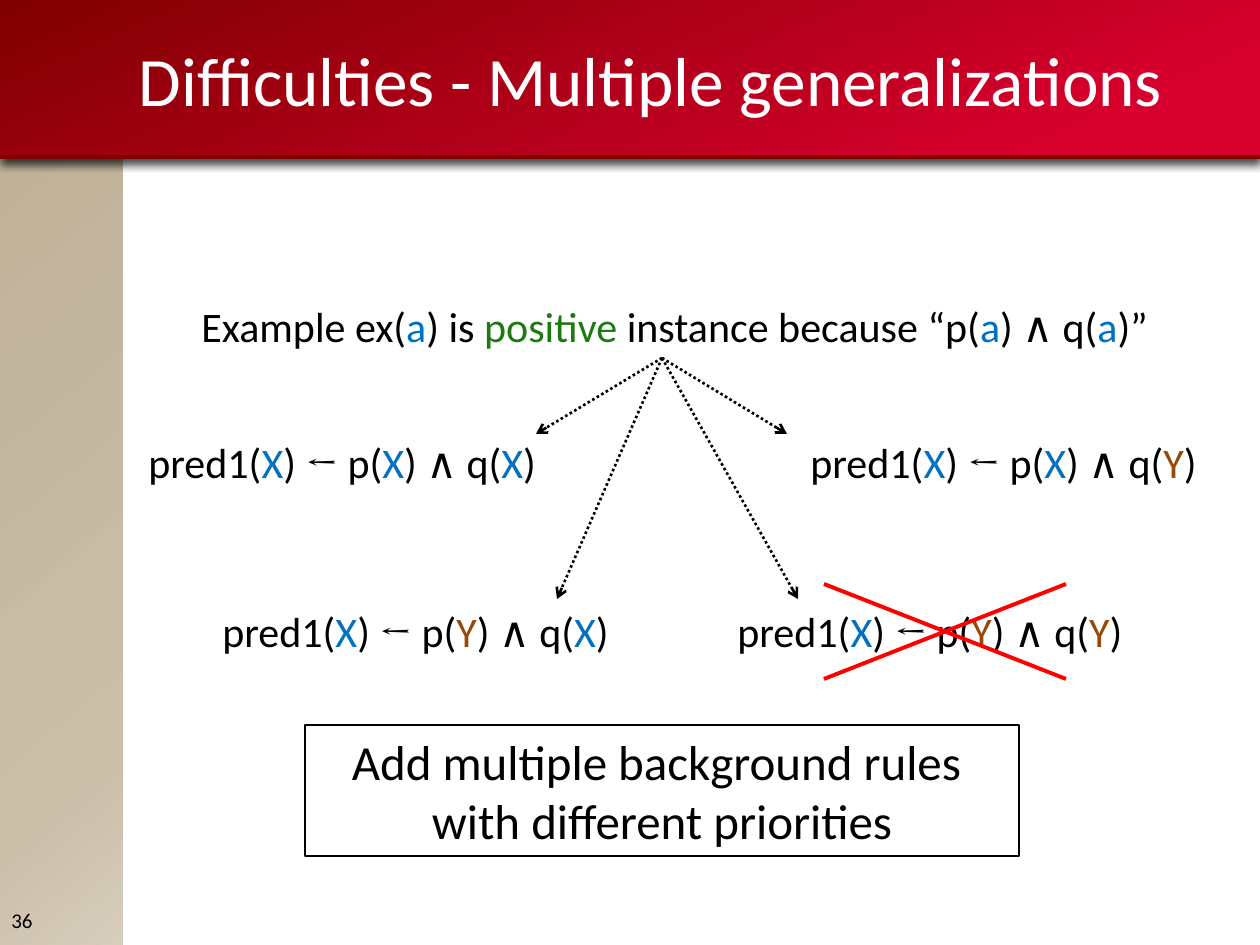
from dataclasses import dataclass

from lxml import etree
from pptx import Presentation
from pptx.dml.color import RGBColor
from pptx.enum.dml import MSO_LINE
from pptx.enum.shapes import MSO_CONNECTOR, MSO_SHAPE
from pptx.enum.text import MSO_ANCHOR, MSO_AUTO_SIZE, PP_ALIGN
from pptx.oxml import parse_xml
from pptx.oxml.ns import nsdecls, qn
from pptx.util import Emu, Pt

RECTANGLE = MSO_SHAPE.RECTANGLE
STRAIGHT = MSO_CONNECTOR.STRAIGHT
DOTTED = MSO_LINE.ROUND_DOT
LEFT, CENTER = PP_ALIGN.LEFT, PP_ALIGN.CENTER
TOP, MIDDLE = MSO_ANCHOR.TOP, MSO_ANCHOR.MIDDLE
GROW = MSO_AUTO_SIZE.SHAPE_TO_FIT_TEXT
EMU_PER_PX = 914400 / 126
TITLE_ONLY = 5


@dataclass(frozen=True)
class Theme:
    font: str = "Calibri"
    arrow_font: str = "Cambria"
    text: str = "000000"
    title: str = "FFFFFF"
    shared: str = "0070C0"
    fresh: str = "984807"
    positive: str = "1C7B0F"
    cross: str = "FF0000"
    band_edge: str = "800000"
    band: tuple = ((0, "800000"), (87, "D8002E"))
    sidebar: tuple = ((0, "BFB198"), (79, "CBBFAA"), (100, "D7CDBC"))
    title_size: float = 39.6
    advice_size: int = 28
    body_size: int = 24
    number_size: int = 12


THEME = Theme()
VARIABLE_COLORS = {"X": THEME.shared, "Y": THEME.fresh}


def px(*lengths):
    return [Emu(round(length * EMU_PER_PX)) for length in lengths]


def add_runs(paragraph, runs, size):
    """Add (text, color[, font]) runs."""
    for text, color, *font in runs:
        run = paragraph.add_run()
        run.text = text
        run.font.size = Pt(size)
        run.font.name = font[0] if font else THEME.font
        run.font.color.rgb = RGBColor.from_string(color)


def add_text(slide, box, runs, size, anchor=TOP, indent=0):
    label = slide.shapes.add_textbox(*px(*box))
    frame = label.text_frame
    frame.word_wrap = True
    frame.vertical_anchor = anchor
    if anchor == TOP:
        frame.auto_size = GROW
    paragraph = frame.paragraphs[0]
    if indent:
        paragraph.level = 1
        properties = paragraph._p.get_or_add_pPr()
        properties.set("marL", str(px(indent)[0]))
        properties.set("indent", "0")
    add_runs(paragraph, runs, size)


def add_gradient_panel(slide, box, stops, angle):
    panel = slide.shapes.add_shape(RECTANGLE, *px(*box))
    panel.shadow.inherit = False
    panel.line.fill.background()
    stop_xml = "".join(
        f'<a:gs pos="{position * 1000}"><a:srgbClr val="{color}"/></a:gs>'
        for position, color in stops
    )
    gradient = parse_xml(
        f'<a:gradFill {nsdecls("a")} rotWithShape="1"><a:gsLst>{stop_xml}</a:gsLst>'
        f'<a:lin ang="{angle * 60000}" scaled="0"/></a:gradFill>'
    )
    panel._element.spPr.find(qn("a:prstGeom")).addnext(gradient)
    return panel


def add_drop_shadow(panel):
    effects = panel._element.spPr.find(qn("a:effectLst"))
    effects.append(parse_xml(
        f'<a:outerShdw {nsdecls("a")} blurRad="{Pt(5)}" dist="{Pt(4)}" dir="5400000" '
        'algn="t" rotWithShape="0"><a:srgbClr val="000000"><a:alpha val="72000"/>'
        '</a:srgbClr></a:outerShdw>'
    ))


def add_line(slide, start, end, color, width, dash=None, arrow=False):
    connector = slide.shapes.add_connector(STRAIGHT, *px(*start, *end))
    line = connector.line
    line.color.rgb = RGBColor.from_string(color)
    line.width = Pt(width)
    if dash:
        line.dash_style = dash
    if arrow:
        etree.SubElement(line._get_or_add_ln(), qn("a:tailEnd"), type="arrow")
    etree.SubElement(connector._element.spPr, qn("a:effectLst"))


def add_title(slide, text):
    title = slide.shapes.title
    slide.shapes._spTree.append(title._element)  # in front of the band
    title.left, title.top, title.width, title.height = px(126, 0, 1092, 157)
    title.text_frame.vertical_anchor = MIDDLE
    paragraph = title.text_frame.paragraphs[0]
    paragraph.alignment = LEFT
    add_runs(paragraph, [(text, THEME.title)], THEME.title_size)


def add_rule(slide, left, top, p_variable, q_variable):
    """Write pred1(X) ← p(..) ∧ q(..) with each variable in its color."""
    runs = [
        ("pred1(", THEME.text),
        ("X", VARIABLE_COLORS["X"]),
        (") ", THEME.text),
        ("← ", THEME.text, THEME.arrow_font),
        ("p(", THEME.text),
        (p_variable, VARIABLE_COLORS[p_variable]),
        (") ∧ q(", THEME.text),
        (q_variable, VARIABLE_COLORS[q_variable]),
        (")", THEME.text),
    ]
    add_text(slide, (left, top, 441, 63), runs, THEME.body_size)


def add_advice(slide, box, lines):
    advice = slide.shapes.add_shape(RECTANGLE, *px(*box))
    advice.shadow.inherit = False
    advice.fill.background()
    advice.line.color.rgb = RGBColor.from_string(THEME.text)
    advice.line.width = Pt(0.75)
    frame = advice.text_frame
    frame.word_wrap = True
    frame.auto_size = GROW
    frame.vertical_anchor = TOP
    for index, line in enumerate(lines):
        paragraph = frame.add_paragraph() if index else frame.paragraphs[0]
        paragraph.alignment = CENTER
        add_runs(paragraph, [(line, THEME.text)], THEME.advice_size)


def main():
    deck = Presentation()
    deck.slide_width, deck.slide_height = px(1260, 945)
    slide = deck.slides.add_slide(deck.slide_layouts[TITLE_ONLY])

    add_gradient_panel(slide, (-1, 136, 124, 809), THEME.sidebar, 50)
    band = add_gradient_panel(slide, (-1, 0, 1262, 157), THEME.band, 66)
    add_drop_shadow(band)
    add_line(slide, (-1, 157), (1260, 157), THEME.band_edge, 2)
    add_title(slide, "Difficulties - Multiple generalizations")

    example = [
        ("Example ex(", THEME.text),
        ("a", THEME.shared),
        (") is ", THEME.text),
        ("positive ", THEME.positive),
        ("instance because “p(", THEME.text),
        ("a", THEME.shared),
        (") ∧ q(", THEME.text),
        ("a", THEME.shared),
        (")”", THEME.text),
    ]
    add_text(slide, (126, 294, 1071, 63), example, THEME.body_size, indent=63)

    for left, top, p_variable, q_variable in (
        (136, 430, "X", "X"),
        (798, 430, "X", "Y"),
        (210, 599, "Y", "X"),
        (725, 599, "Y", "Y"),
    ):
        add_rule(slide, left, top, p_variable, q_variable)

    for rule_end in ((536, 434), (787, 434), (557, 599), (798, 599)):
        add_line(slide, (662, 358), rule_end, THEME.text, 1.5, DOTTED, arrow=True)

    for start_x, end_x in ((1066, 824), (824, 1066)):
        add_line(slide, (start_x, 584), (end_x, 679), THEME.cross, 2.25)

    add_advice(slide, (305, 725, 714, 131),
               ("Add multiple background rules ", "with different priorities"))
    add_text(slide, (-1, 895, 124, 50), [("36", THEME.text)], THEME.number_size, MIDDLE)

    deck.save("out.pptx")


if __name__ == "__main__":
    main()
